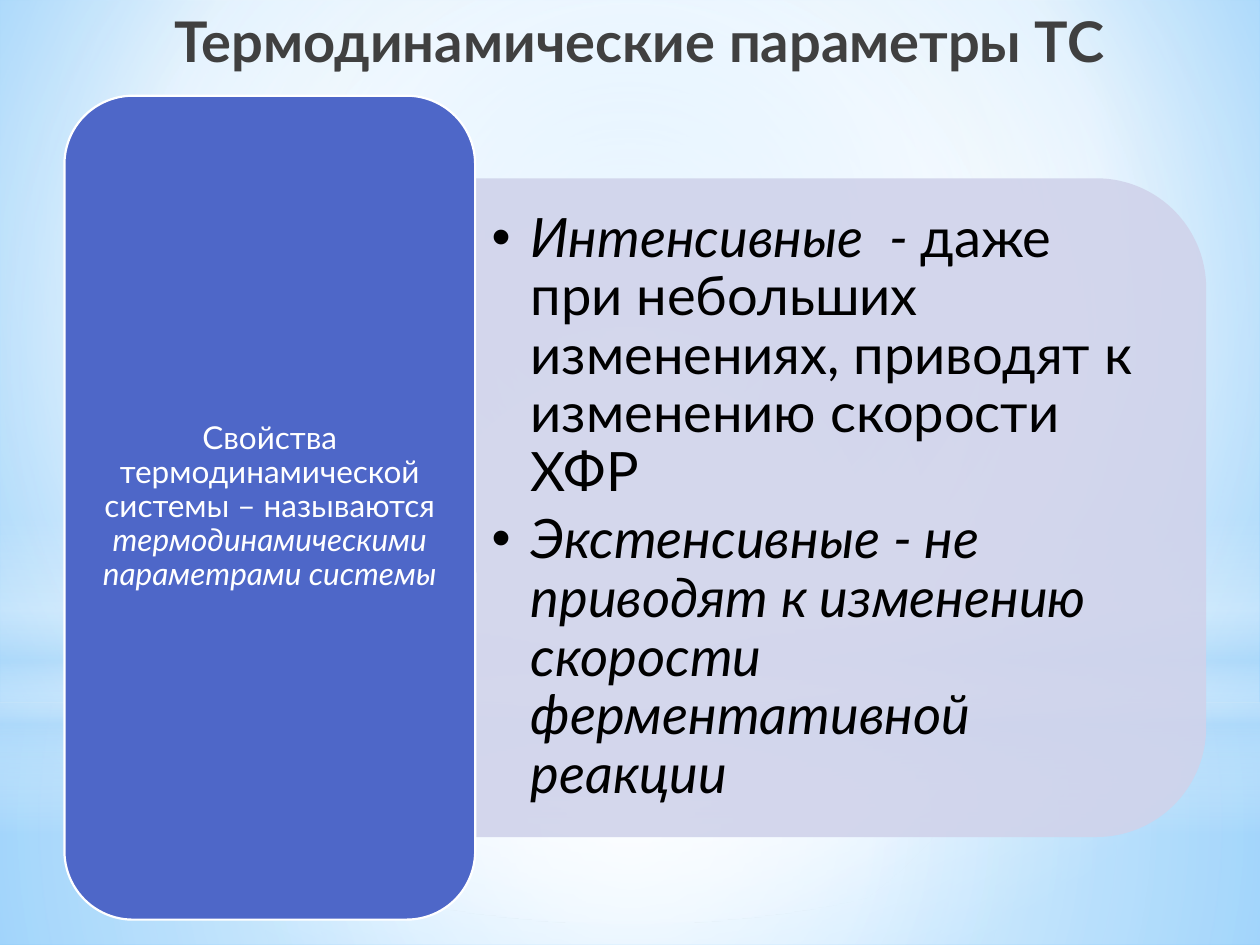
"""Build the slide on thermodynamic parameters of a thermodynamic system."""
import pptx
import pptx.dml.color
import pptx.enum.shapes
import pptx.enum.text
import pptx.oxml
import pptx.oxml.ns
import pptx.util

Cm, Pt = pptx.util.Cm, pptx.util.Pt
SHAPE = pptx.enum.shapes.MSO_SHAPE
ALIGN = pptx.enum.text.PP_ALIGN
ANCHOR = pptx.enum.text.MSO_ANCHOR
qn = pptx.oxml.ns.qn

FONT = "Lato"
WIDTH, HEIGHT = 25.4, 19.05
TITLE = "Термодинамические параметры ТС"
DEFINITION = [
    ("Свойства термодинамической системы – называются ", False),
    ("термодинамическими параметрами системы", True),
]
PARAMETERS = [
    [("Интенсивные  - ", True),
     ("даже при небольших изменениях, приводят к изменению скорости ХФР", False)],
    [("Экстенсивные - не приводят к изменению скорости ферментативной реакции", True)],
]

CENTER = (50, 50, 50, 50)
BACKDROP = ([(0, "9ED5FF", 100), (60, "FFFFFF", 100), (100, "5BB9FF", 100)], (20, 10, 20, 60))
GLOWS = [
    (SHAPE.RECTANGLE, (0, 14.17, WIDTH, 4.88),
     [(0, "FFFFFF", 91), (37, "FFFFFF", 76), (100, "B4DCFA", 79)], CENTER),
    (SHAPE.RECTANGLE, (0, 0, WIDTH, 14.17),
     [(0, "FFFFFF", 89), (48, "FFFFFF", 62), (100, "B4DCFA", 79)], CENTER),
    (SHAPE.RECTANGLE, (0, 10.46, WIDTH, 6.35),
     [(0, "FFFFFF", 0), (29, "FFFFFF", 30), (45, "B4DCFA", 40),
      (55, "FFFFFF", 26), (65, "B4DCFA", 60), (100, "FFFFFF", 0)], None),
    (SHAPE.OVAL, (0, 4.45, WIDTH, 14.17),
     [(0, "FFFFFF", 100), (56, "FFFFFF", 0)], CENTER),
]


def rgb(value):
    """Return the colour for a hex string."""
    return pptx.dml.color.RGBColor.from_string(value)


def set_gradient(fill, element, stops, focus):
    """Fill with a circular gradient around focus, or a vertical one without it."""
    fill.gradient()
    grad = element.find(".//" + qn("a:gradFill"))
    marks = "".join(
        f'<a:gs pos="{pos * 1000}"><a:srgbClr val="{color}">'
        f'<a:alpha val="{alpha * 1000}"/></a:srgbClr></a:gs>'
        for pos, color, alpha in stops)
    if focus:
        sides = " ".join(f'{side}="{n * 1000}"' for side, n in zip("ltrb", focus))
        course = f'<a:path path="circle"><a:fillToRect {sides}/></a:path>'
    else:
        course = '<a:lin ang="5400000" scaled="0"/>'
    grad.getparent().replace(grad, pptx.oxml.parse_xml(
        f'<a:gradFill {pptx.oxml.ns.nsdecls("a")} rotWithShape="1">'
        f"<a:gsLst>{marks}</a:gsLst>{course}</a:gradFill>"))


def add_shape(slide, kind, box, color=None, line=None):
    """Add a preset shape without shadow, with optional fill and outline."""
    sp = slide.shapes.add_shape(kind, *map(Cm, box))
    sp.shadow.inherit = False
    if color:
        sp.fill.solid()
        sp.fill.fore_color.rgb = rgb(color)
    if line:
        sp.line.color.rgb = rgb(line)
        sp.line.width = Pt(1.25)
    else:
        sp.line.fill.background()
    return sp


def place(sp, box):
    """Move a placeholder to the box and bring it to the front."""
    sp.left, sp.top, sp.width, sp.height = map(Cm, box)
    sp.element.getparent().append(sp.element)


def set_frame(tf, anchor, side, edge):
    """Set wrapping, anchoring and margins of a text frame."""
    tf.word_wrap = True
    tf.auto_size = pptx.enum.text.MSO_AUTO_SIZE.NONE
    tf.vertical_anchor = anchor
    tf.margin_left = tf.margin_right = Cm(side)
    tf.margin_top = tf.margin_bottom = Cm(edge)


def write(p, runs, size, color, align, after=0):
    """Write (text, italic) runs into a paragraph."""
    p.font.name, p.font.size, p.font.color.rgb = FONT, Pt(size), rgb(color)
    p.alignment = align
    p.line_spacing, p.space_before, p.space_after = 0.9, Pt(0), Pt(after)
    for text, italic in runs:
        r = p.add_run()
        r.text = text
        r.font.italic = italic


def add_bullet(p, indent):
    """Give a paragraph a round bullet with a hanging indent."""
    props = p._p.get_or_add_pPr()
    props.set("marL", str(Cm(indent)))
    props.set("indent", str(-Cm(indent)))
    bullet = pptx.oxml.parse_xml(f'<a:buChar {pptx.oxml.ns.nsdecls("a")} char="•"/>')
    props.find(qn("a:defRPr")).addprevious(bullet)


def main():
    """Build and save the slide."""
    prs = pptx.Presentation()
    prs.slide_width, prs.slide_height = Cm(WIDTH), Cm(HEIGHT)
    slide = prs.slides.add_slide(prs.slide_layouts[1])
    title, body = slide.placeholders

    set_gradient(slide.background.fill, slide.element, *BACKDROP)
    for kind, box, stops, focus in GLOWS:
        sp = add_shape(slide, kind, box)
        set_gradient(sp.fill, sp.element, stops, focus)

    place(title, (2.11, 0, 21.59, 3.18))
    set_frame(title.text_frame, ANCHOR.TOP, 0.25, 0.13)
    p = title.text_frame.paragraphs[0]
    write(p, [(TITLE, False)], 32, "404040", ALIGN.CENTER)
    p.line_spacing = 1.0
    p.font.bold = True

    panel = add_shape(slide, SHAPE.ROUND_2_SAME_RECTANGLE,
                      (10.31, 2.87, 13.28, 14.73), "D0D3EB")
    panel.rotation = 90
    color = panel.element.spPr.find(qn("a:solidFill"))[0]
    color.append(pptx.oxml.parse_xml(
        f'<a:alpha {pptx.oxml.ns.nsdecls("a")} val="90000"/>'))

    place(body, (9.58, 4.24, 14.07, 11.99))
    tf = body.text_frame
    set_frame(tf, ANCHOR.MIDDLE, 0.33, 0.15)
    for i, runs in enumerate(PARAMETERS):
        p = tf.add_paragraph() if i else tf.paragraphs[0]
        write(p, runs, 31, "000000", ALIGN.LEFT, after=5)
        add_bullet(p, 0.79)

    card = add_shape(slide, SHAPE.ROUNDED_RECTANGLE,
                     (1.3, 1.93, 8.28, 16.61), "4E67C8", "FFFFFF")
    set_frame(card.text_frame, ANCHOR.MIDDLE, 0.18, 0.1)
    write(card.text_frame.paragraphs[0], DEFINITION, 18, "FFFFFF", ALIGN.CENTER, after=6)

    prs.save("out.pptx")


if __name__ == "__main__":
    main()
